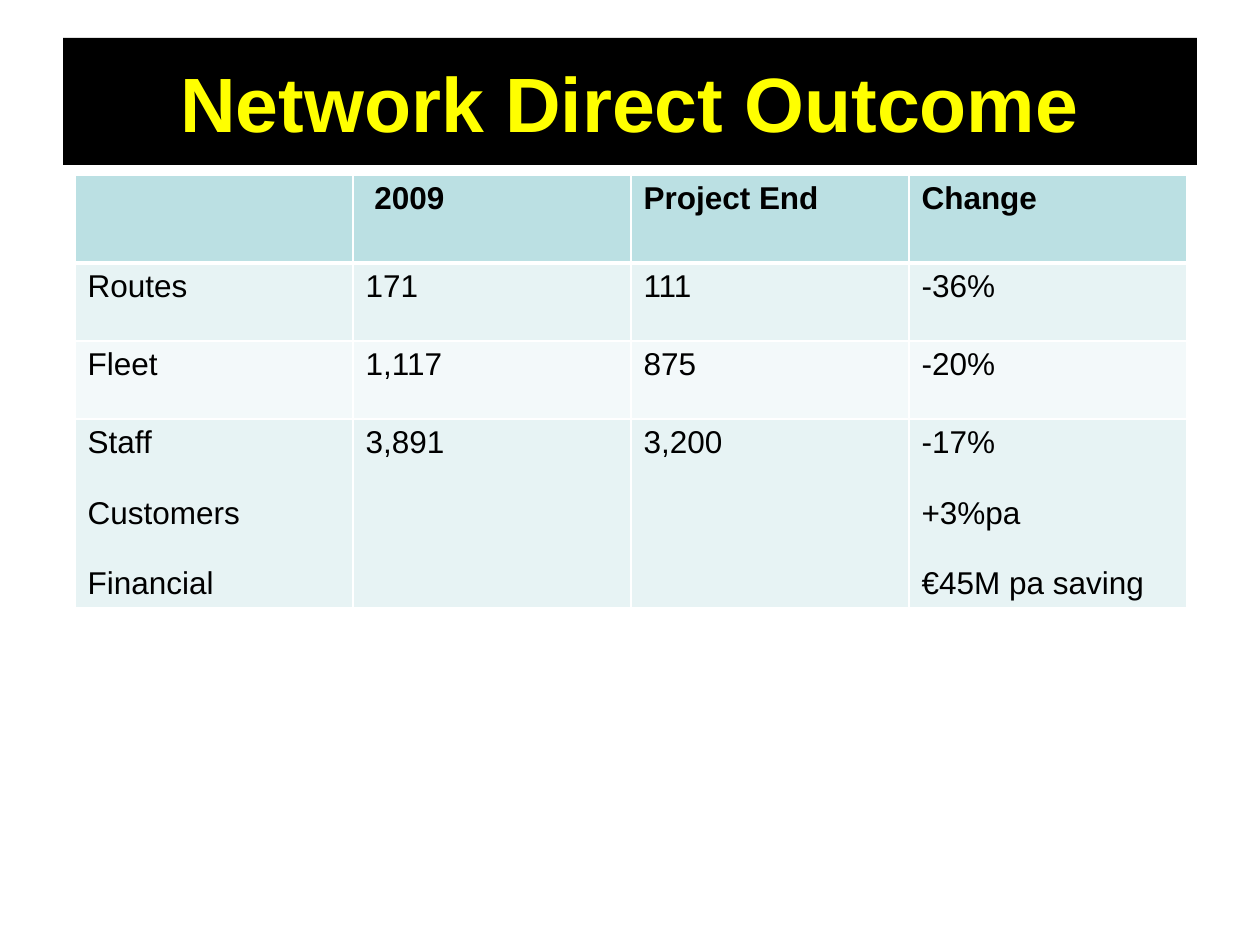
from lxml import etree
from pptx import Presentation, util as u
from pptx.dml.color import RGBColor
from pptx.enum import text as t
from pptx.oxml.ns import qn

BLACK = RGBColor(0, 0, 0)
WHITE = RGBColor(255, 255, 255)
YELLOW = RGBColor(255, 255, 0)
TEAL = RGBColor(0xBB, 0xE0, 0xE3)
PALE = RGBColor(0xE7, 0xF3, 0xF4)
MIST = RGBColor(0xF3, 0xF9, 0xFA)

ROWS = [
    ["", " 2009", "Project End", "Change"],
    ["Routes", "171", "111", "-36%"],
    ["Fleet", "1,117", "875", "-20%"],
    ["Staff\nCustomers\nFinancial", "3,891", "3,200",
     "-17%\n+3%pa\n€45M pa saving"],
]
HEIGHTS = [88, 78, 78, 188]


def px(n):
    return u.Emu(round(n * 914400 / 126))


def style(font, size, color, bold):
    look = {"name": "Arial", "size": u.Pt(size), "bold": bold}
    for key, val in look.items():
        setattr(font, key, val)
    font.color.rgb = color


def place(shape, box):
    for key, val in zip(("left", "top", "width", "height"), box):
        setattr(shape, key, px(val))


def edge(cell, side, points):
    line = etree.SubElement(cell._tc.get_or_add_tcPr(), qn(f"a:ln{side}"),
                            w=str(u.Pt(points)))
    fill = etree.SubElement(line, qn("a:solidFill"))
    etree.SubElement(fill, qn("a:srgbClr"), val=str(WHITE))


def banner(slide, box):
    title = slide.shapes.title
    place(title, box)
    title.fill.solid()
    title.fill.fore_color.rgb = BLACK
    frame = title.text_frame
    frame.text = "Network Direct Outcome"
    look = {"word_wrap": True, "auto_size": t.MSO_AUTO_SIZE.NONE,
            "vertical_anchor": t.MSO_ANCHOR.MIDDLE}
    for key, val in look.items():
        setattr(frame, key, val)
    para = frame.paragraphs[0]
    para.alignment = t.PP_ALIGN.CENTER
    style(para.font, 44, YELLOW, True)


def grid(slide, box):
    left, top, width, height = map(px, box)
    table = slide.shapes.add_table(len(ROWS), len(ROWS[0]),
                                   left, top, width, height).table
    for r, row in enumerate(ROWS):
        table.rows[r].height = px(HEIGHTS[r])
        head = r == 0
        for c, words in enumerate(row):
            cell = table.cell(r, c)
            # White rules, heavier under the header
            for side in "LRTB":
                heavy = (r, side) in ((0, "B"), (1, "T"))
                edge(cell, side, 3 if heavy else 1)
            cell.fill.solid()
            cell.fill.fore_color.rgb = TEAL if head else (MIST, PALE)[r % 2]
            # One paragraph per entry, spaced apart
            cell.text = words
            for i, para in enumerate(cell.text_frame.paragraphs):
                if i:
                    para.space_before = u.Pt(20)
                style(para.font, 18, BLACK, head)


def main():
    deck = Presentation()
    deck.slide_width, deck.slide_height = px(1260), px(945)
    slide = deck.slides.add_slide(deck.slide_layouts[5])
    banner(slide, (63, 38, 1134, 127))
    grid(slide, (75, 175, 1112, sum(HEIGHTS)))
    deck.save("out.pptx")


if __name__ == "__main__":
    main()
